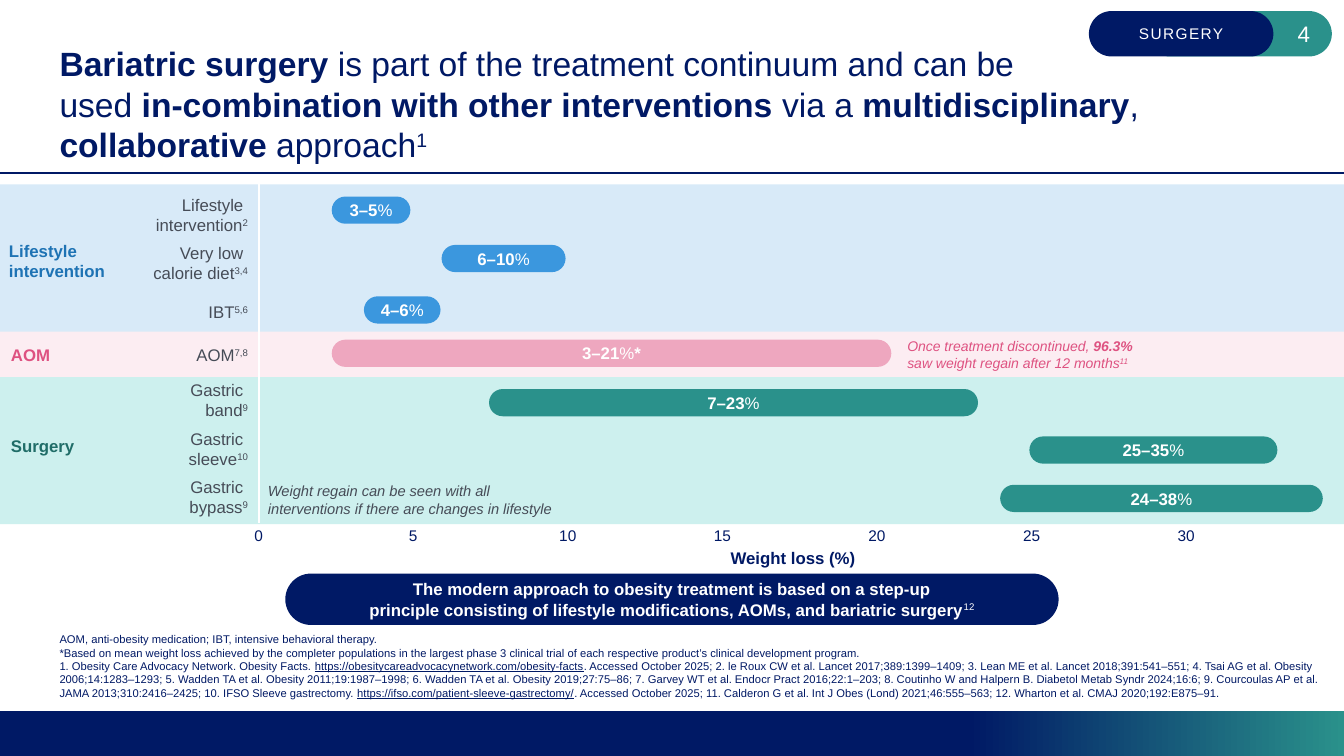
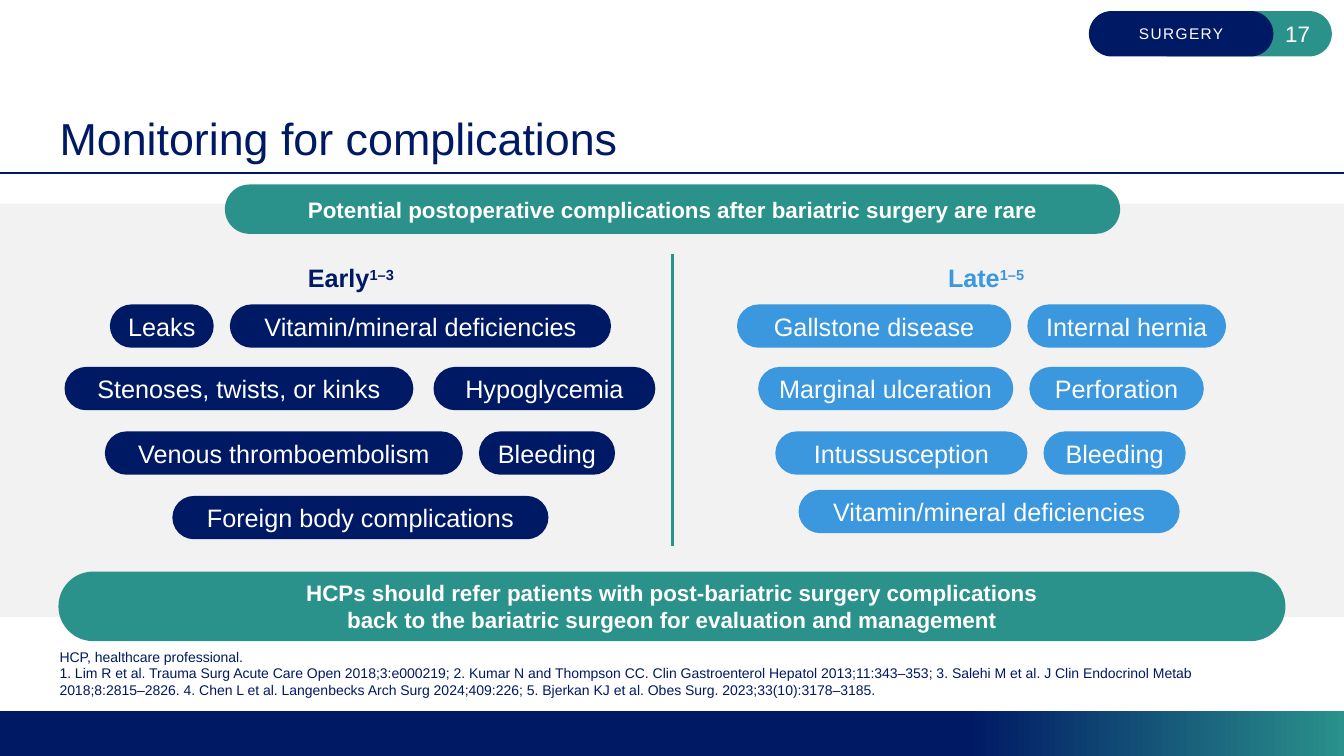
from copy import deepcopy

from pptx import Presentation
from pptx.dml.color import RGBColor
from pptx.enum import shapes, text
from pptx.oxml import ns, xmlchemy
from pptx.util import Inches, Pt

NAVY = RGBColor(0x00, 0x19, 0x65)
TEAL = RGBColor(0x2A, 0x91, 0x8B)
PINE = RGBColor(0x20, 0x6D, 0x68)
MINT = RGBColor(0xCD, 0xF0, 0xEE)
BLUE = RGBColor(0x3B, 0x97, 0xDE)
DEEP = RGBColor(0x1E, 0x73, 0xB4)
SKY = RGBColor(0xD8, 0xEA, 0xF8)
PINK = RGBColor(0xEE, 0xA7, 0xBF)
ROSE = RGBColor(0xDE, 0x52, 0x81)
BLUSH = RGBColor(0xFC, 0xED, 0xF2)
SLATE = RGBColor(0x46, 0x4C, 0x57)
MIST = RGBColor(0xF2, 0xF2, 0xF2)
WHITE = RGBColor(0xFF, 0xFF, 0xFF)

FONT = "Arial"
ALIGN = {
    "l": text.PP_ALIGN.LEFT,
    "c": text.PP_ALIGN.CENTER,
    "r": text.PP_ALIGN.RIGHT,
}
ANCHOR = {
    "t": text.MSO_ANCHOR.TOP,
    "m": text.MSO_ANCHOR.MIDDLE,
    "b": text.MSO_ANCHOR.BOTTOM,
}


def write(shape, *parts, size=12, color=NAVY, align="l", anchor="t",
          inset=(0, 0), space=0):
    """Each part is plain text or (text, marks): b bold, i italic, u underline, ^ raised."""
    frame = shape.text_frame
    frame.auto_size = text.MSO_AUTO_SIZE.NONE
    frame.word_wrap = True
    frame.vertical_anchor = ANCHOR[anchor]
    frame.margin_left = frame.margin_right = Inches(inset[0])
    frame.margin_top = frame.margin_bottom = Inches(inset[1])
    para = frame.paragraphs[0]
    para.alignment = ALIGN[align]
    para.space_before = Pt(0)
    for part in parts:
        words, marks = (part, "") if isinstance(part, str) else part
        for row, line in enumerate(words.split("\n")):
            if row:
                para.add_line_break()
            if not line:
                continue
            run = para.add_run()
            run.text = line
            font = run.font
            font.name, font.size = FONT, Pt(size)
            font.color.rgb = color
            font.bold, font.italic = "b" in marks, "i" in marks
            font.underline = "u" in marks
            props = run._r.get_or_add_rPr()
            if "^" in marks:
                props.set("baseline", "30000")
            if space:
                props.set("spc", str(space * 100))
    return para


class Deck:
    def __init__(self):
        self.file = Presentation()
        self.file.slide_width = Inches(13.33)
        self.file.slide_height = Inches(7.5)
        self.slide = None

    def start(self, number, title, size):
        self.slide = self.file.slides.add_slide(self.file.slide_layouts[1])
        self.fade((0, 7.05, 13.33, 0.45))
        self.line((0, 1.72), (13.33, 1.72), NAVY, 1.5)
        self.pill((11.38, 0.11, 1.83, 0.45), TEAL, str(number), size=16,
                  align="r", inset=(0.15, 0.04))
        self.pill((10.8, 0.11, 1.83, 0.45), NAVY, "SURGERY", size=11, space=1)
        head = self.place(self.slide.shapes.title, (0.59, 0.45, 11.92, 1.18))
        write(head, *title, size=size, anchor="b")

    def place(self, shape, box):
        shape.left, shape.top, shape.width, shape.height = map(Inches, box)
        return shape

    def notes(self, box, *parts, size):
        body = self.place(self.slide.placeholders[1], box)
        props = write(body, *parts, size=size, anchor="b")._p.get_or_add_pPr()
        props.set("marL", "0")
        props.set("indent", "0")
        props.append(xmlchemy.OxmlElement("a:buNone"))

    def shape(self, kind, box):
        item = self.slide.shapes.add_shape(kind, *map(Inches, box))
        item.shadow.inherit = False
        item.line.fill.background()
        return item

    def band(self, box, color):
        item = self.shape(shapes.MSO_SHAPE.RECTANGLE, box)
        item.fill.solid()
        item.fill.fore_color.rgb = color

    def fade(self, box):
        item = self.shape(shapes.MSO_SHAPE.RECTANGLE, box)
        item.fill.gradient()
        item.fill.gradient_angle = 0
        for stop, color, spot in zip(item.fill.gradient_stops, (NAVY, TEAL), (0, 1)):
            stop.color.rgb = color
            stop.position = spot
        stops = next(item.element.iter(ns.qn("a:gsLst")))
        mid = deepcopy(stops[0])
        mid.set("pos", "72000")
        stops.insert(1, mid)

    def pill(self, box, color, *parts, align="c", **style):
        item = self.shape(shapes.MSO_SHAPE.ROUNDED_RECTANGLE, box)
        item.adjustments[0] = 0.5
        item.fill.solid()
        item.fill.fore_color.rgb = color
        write(item, *parts, color=WHITE, align=align, anchor="m", **style)

    def label(self, box, *parts, **style):
        item = self.slide.shapes.add_textbox(*map(Inches, box))
        write(item, *parts, inset=(0.1, 0.05), **style)

    def line(self, start, end, color, width):
        item = self.slide.shapes.add_connector(
            shapes.MSO_CONNECTOR.STRAIGHT, *map(Inches, start + end))
        item.line.color.rgb = color
        item.line.width = Pt(width)
        item.element.spPr.append(xmlchemy.OxmlElement("a:effectLst"))

    def row(self, left, top, gap, color, *items):
        for words, width in items:
            self.pill((left, top, width, 0.43), color, words, size=18)
            left += width + gap


def chart(deck):
    deck.start(4, [
        ("Bariatric surgery ", "b"),
        "is part of the treatment continuum and can be \nused ",
        ("in-combination with other interventions ", "b"), "via a ",
        ("multidisciplinary", "b"), ", ", ("collaborative", "b"),
        " approach", ("1", "^")], 24)
    deck.notes(
        (0.59, 6.19, 12.53, 0.75),
        "AOM, anti-obesity medication; IBT, intensive behavioral therapy.\n"
        "*Based on mean weight loss achieved by the completer populations in the largest "
        "phase 3 clinical trial of each respective product’s clinical development program.\n"
        "1. Obesity Care Advocacy Network. Obesity Facts. ",
        ("https://obesitycareadvocacynetwork.com/obesity-facts", "u"),
        ". Accessed October 2025; 2. le Roux CW et al. Lancet 2017;389:1399–1409; "
        "3. Lean ME et al. Lancet 2018;391:541–551; 4. Tsai AG et al. Obesity "
        "2006;14:1283–1293; 5. Wadden TA et al. Obesity 2011;19:1987–1998; 6. Wadden TA "
        "et al. Obesity 2019;27:75–86; 7. Garvey WT et al. Endocr Pract 2016;22:1–203; "
        "8. Coutinho W and Halpern B. Diabetol Metab Syndr 2024;16:6; 9. Courcoulas AP "
        "et al. JAMA 2013;310:2416–2425; 10. IFSO Sleeve gastrectomy. ",
        ("https://ifso.com/patient-sleeve-gastrectomy/", "u"),
        ". Accessed October 2025; 11. Calderon G et al. Int J Obes (Lond) "
        "2021;46:555–563; 12. Wharton et al. CMAJ 2020;192:E875–91.", size=8)

    groups = [
        ("Surgery", 3.73, 1.47, MINT, PINE, 0.01, 4.27),
        ("AOM", 3.28, 0.46, BLUSH, ROSE, 0.01, 3.37),
        ("Lifestyle intervention", 1.83, 1.46, SKY, DEEP, -0.01, 2.34),
    ]
    for name, top, height, back, ink, left, base in groups:
        deck.band((0, top, 13.33, height), back)
        deck.label((left, base, 1.52, 0.31), (name, "b"), color=ink)
    deck.line((2.57, 1.83), (2.57, 5.19), WHITE, 1.5)

    for step in range(7):
        deck.label((2.22 + 9.2 / 6 * step, 5.17, 0.69, 0.29), str(step * 5),
                   size=11, align="c")
    deck.label((2.52, 5.38, 10.69, 0.31), ("Weight loss (%)", "b"), align="c")

    rows = [
        ("Lifestyle \nintervention", "2", 1.88, 1.95, 3.29, 0.78, BLUE, "3–5", ""),
        ("Very low \ncalorie diet", "3,4", 2.36, 2.43, 4.38, 1.23, BLUE, "6–10", ""),
        ("IBT", "5,6", 2.94, 2.94, 3.61, 0.76, BLUE, "4–6", ""),
        ("AOM", "7,8", 3.37, 3.37, 3.29, 5.55, PINK, "3–21", "*"),
        ("Gastric \nband", "9", 3.72, 3.86, 4.85, 4.85, TEAL, "7–23", ""),
        ("Gastric \nsleeve", "10", 4.2, 4.33, 10.21, 2.46, TEAL, "25–35", ""),
        ("Gastric \nbypass", "9", 4.68, 4.81, 9.92, 3.2, TEAL, "24–38", ""),
    ]
    for name, ref, top, bar, left, width, color, span, star in rows:
        deck.label((1.06, top, 1.5, 0.52), name, (ref, "^"), color=SLATE, align="r")
        deck.pill((left, bar, width, 0.27), color, (span, "b"), "%", (star, "b"))

    deck.label((8.9, 3.3, 2.62, 0.45), ("Once treatment discontinued, ", "i"),
               ("96.3% ", "bi"), ("saw weight regain after 12 months", "i"),
               ("11", "i^"), size=10, color=ROSE)
    deck.label((2.56, 4.73, 3.26, 0.46),
               ("Weight regain can be seen with all interventions if there are "
                "changes in lifestyle", "i"), size=10.5, color=SLATE)
    deck.pill((2.83, 5.69, 7.67, 0.51), NAVY,
              ("The modern approach to obesity treatment is based on a step-up\n"
               "principle consisting of lifestyle modifications, AOMs, and bariatric "
               "surgery", "b"), ("12", "^"))


def risks(deck):
    deck.start(17, ["Monitoring for complications"], 32)
    deck.notes(
        (0.59, 6.43, 11.92, 0.5),
        "HCP, healthcare professional.\n"
        "1. Lim R et al. Trauma Surg Acute Care Open 2018;3:e000219; 2. Kumar N and "
        "Thompson CC. Clin Gastroenterol Hepatol 2013;11:343–353; 3. Salehi M et al. "
        "J Clin Endocrinol Metab 2018;8:2815–2826. 4. Chen L et al. Langenbecks Arch "
        "Surg 2024;409:226; 5. Bjerkan KJ et al. Obes Surg. 2023;33(10):3178–3185.",
        size=10)
    deck.band((0, 2.02, 13.33, 4.1), MIST)
    deck.line((6.67, 2.52), (6.67, 5.42), TEAL, 2.25)
    deck.pill((2.23, 1.83, 8.88, 0.49), TEAL,
              ("Potential postoperative complications after bariatric surgery are rare",
               "b"), size=16)
    deck.pill((0.58, 5.67, 12.17, 0.69), TEAL,
              ("HCPs should refer patients with post-bariatric surgery complications\n"
               "back to the bariatric surgeon for evaluation and management", "b"),
              size=16)

    for name, ref, left, color in (("Early", "1–3", 0.74, NAVY),
                                   ("Late", "1–5", 7.04, BLUE)):
        deck.label((left, 2.58, 5.48, 0.35), (name, "b"), (ref, "b^"), size=18,
                   color=color, align="c", anchor="m")

    lack = ("Vitamin/mineral deficiencies", 3.78)
    deck.row(1.09, 3.02, 0.16, NAVY, ("Leaks", 1.03), lack)
    deck.row(0.64, 3.64, 0.2, NAVY, ("Stenoses, twists, or kinks", 3.46),
             ("Hypoglycemia", 2.2))
    deck.row(1.04, 4.28, 0.16, NAVY, ("Venous thromboembolism", 3.55),
             ("Bleeding", 1.35))
    deck.row(1.71, 4.92, 0.16, NAVY, ("Foreign body complications", 3.73))
    deck.row(7.31, 3.02, 0.16, BLUE, ("Gallstone disease", 2.72),
             ("Internal hernia", 1.97))
    deck.row(7.52, 3.64, 0.16, BLUE, ("Marginal ulceration", 2.53),
             ("Perforation", 1.73))
    deck.row(7.69, 4.28, 0.16, BLUE, ("Intussusception", 2.5), ("Bleeding", 1.41))
    deck.row(7.92, 4.86, 0.16, BLUE, lack)


def main():
    deck = Deck()
    chart(deck)
    risks(deck)
    deck.file.save("out.pptx")


if __name__ == "__main__":
    main()
